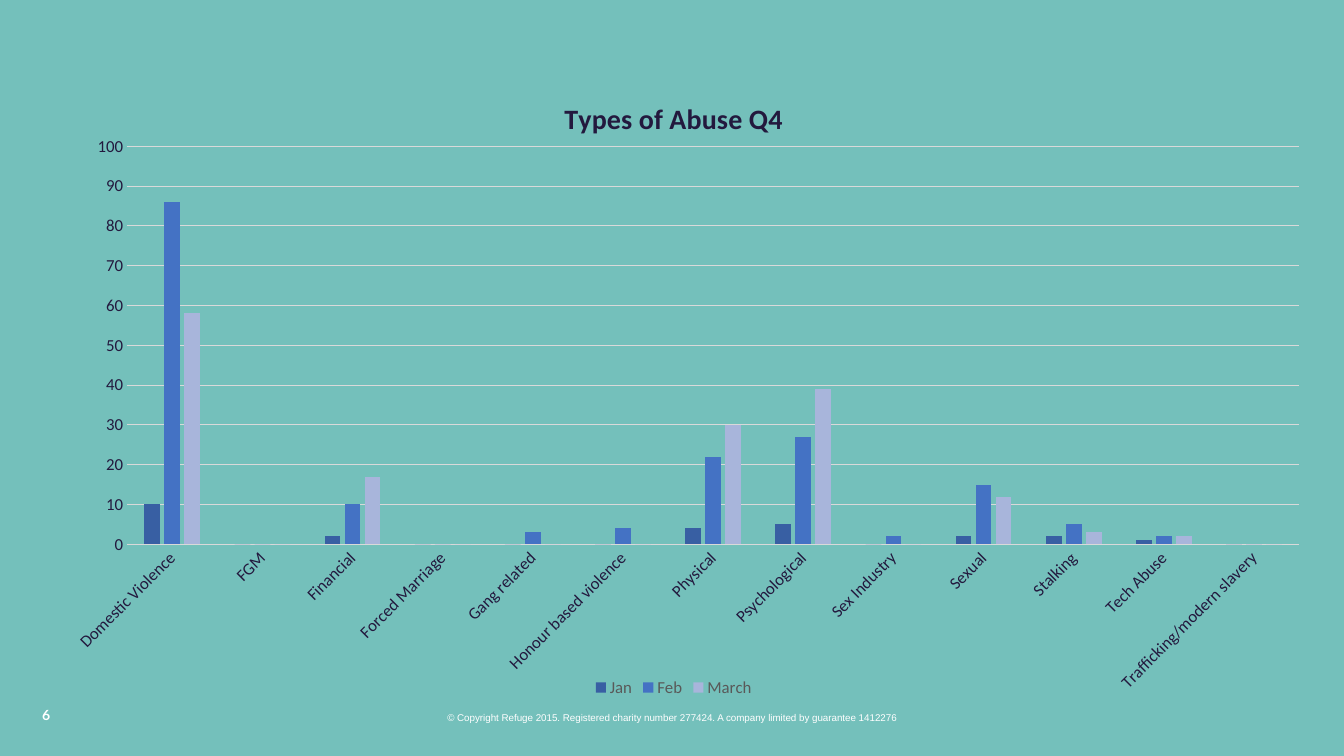
import pptx
import pptx.chart.data
import pptx.dml.color
import pptx.enum.chart
import pptx.enum.text
import pptx.oxml
import pptx.oxml.ns
import pptx.util
from pptx.util import Inches

COLORS = {
    "background": "74C0BB", "ink": "23193E", "grid": "D9D9D9",
    "legend": "595959", "white": "FFFFFF",
    "Jan": "385FA3", "Feb": "4472C4", "March": "A8B5DB",
}

ABUSE_TYPES = [
    "Domestic Violence", "FGM", "Financial", "Forced Marriage", "Gang related",
    "Honour based violence", "Physical", "Psychological", "Sex Industry",
    "Sexual", "Stalking", "Tech Abuse", "Trafficking/modern slavery",
]
MONTHLY_CASES = {
    "Jan": [10, 0, 2, 0, 0, 0, 4, 5, 0, 2, 2, 1, 0],
    "Feb": [86, 0, 10, 0, 3, 4, 22, 27, 2, 15, 5, 2, 0],
    "March": [58, 0, 17, 0, 0, 0, 30, 39, 0, 12, 3, 2, 0],
}


def rgb(name):
    """Return the named colour."""
    return pptx.dml.color.RGBColor.from_string(COLORS[name])


def style_font(font, size, color, family="Calibri", bold=False):
    """Set size, colour, family and weight of a font."""
    font.size = pptx.util.Pt(size)
    font.color.rgb = rgb(color)
    font.name = family
    font.bold = bold


def style_line(line):
    """Give a chart line the thin grid look."""
    line.color.rgb = rgb("grid")
    line.width = pptx.util.Pt(0.75)


def manual_layout(x, y, width=None, height=None):
    """Build a chart layout element from fractions of the chart area."""
    settings = [("xMode", "edge"), ("yMode", "edge"), ("x", x), ("y", y)]
    if width is not None:
        settings = [("layoutTarget", "inner")] + settings + [("w", width), ("h", height)]
    body = "".join(f'<c:{tag} val="{value}"/>' for tag, value in settings)
    return pptx.oxml.parse_xml(
        f'<c:layout {pptx.oxml.ns.nsdecls("c")}><c:manualLayout>{body}</c:manualLayout></c:layout>')


def style_axes(chart):
    """Format the category and value axes."""
    for axis in (chart.category_axis, chart.value_axis):
        axis.major_tick_mark = pptx.enum.chart.XL_TICK_MARK.NONE
        axis.minor_tick_mark = pptx.enum.chart.XL_TICK_MARK.NONE
        style_font(axis.tick_labels.font, 12, "ink")
    abuse_axis, cases_axis = chart.category_axis, chart.value_axis
    style_line(abuse_axis.format.line)
    label_body = abuse_axis._element.find(
        pptx.oxml.ns.qn("c:txPr")).find(pptx.oxml.ns.qn("a:bodyPr"))
    label_body.set("rot", "-2700000")
    label_body.set("vert", "horz")
    cases_axis.minimum_scale, cases_axis.maximum_scale = 0, 100
    cases_axis.major_unit = 10
    cases_axis.format.line.fill.background()
    style_line(cases_axis.major_gridlines.format.line)


def add_abuse_chart(slide, left, top, width, height):
    """Place the clustered column chart of abuse types in the given box."""
    cases = pptx.chart.data.CategoryChartData()
    cases.categories = ABUSE_TYPES
    for month, counts in MONTHLY_CASES.items():
        cases.add_series(month, counts)
    chart = slide.shapes.add_chart(
        pptx.enum.chart.XL_CHART_TYPE.COLUMN_CLUSTERED,
        left, top, width, height, cases).chart
    chart.font.size = pptx.util.Pt(10)
    chart.font.name = "Calibri"

    heading = chart.chart_title
    heading.text_frame.text = "Types of Abuse Q4"
    style_font(heading.text_frame.paragraphs[0].runs[0].font, 20, "ink", bold=True)
    heading.include_in_layout = False
    heading._element.find(pptx.oxml.ns.qn("c:tx")).addnext(manual_layout(0.41, 0.04))

    chart.has_legend = True
    chart.legend.position = pptx.enum.chart.XL_LEGEND_POSITION.BOTTOM
    chart.legend.include_in_layout = False
    style_font(chart.legend.font, 12, "legend")

    columns = chart.plots[0]
    columns.gap_width, columns.overlap = 219, -27
    columns.vary_by_categories = False
    for month in columns.series:
        month.format.fill.solid()
        month.format.fill.fore_color.rgb = rgb(month.name)
        month.invert_if_negative = False
    style_axes(chart)

    plot_area = chart._chartSpace.chart.plotArea
    for automatic in plot_area.findall(pptx.oxml.ns.qn("c:layout")):
        plot_area.remove(automatic)
    plot_area.insert(0, manual_layout(0.063, 0.113, 0.937, 0.636))


def add_note(slide, words, box, size, family, bold=False, centered=False):
    """Place one line of white text in the given box."""
    note = slide.shapes.add_textbox(*box).text_frame
    note.word_wrap = True
    note.text = words
    line = note.paragraphs[0]
    if centered:
        line.alignment = pptx.enum.text.PP_ALIGN.CENTER
    style_font(line.runs[0].font, size, "white", family, bold)


def add_footer(slide, left, top, width):
    """Place the page number and the copyright line along the bottom."""
    add_note(slide,
             "© Copyright Refuge 2015. Registered charity number 277424. "
             "A company limited by guarantee 1412276",
             (left, top + Inches(0.05), width, Inches(0.22)), 7, "Arial", centered=True)
    add_note(slide, "6", (left + Inches(0.32), top, Inches(3), Inches(0.4)),
             10, "Lato", bold=True)


def main():
    """Build and save the slide."""
    deck = pptx.Presentation()
    deck.slide_width, deck.slide_height = Inches(13.33), Inches(7.5)
    slide = deck.slides.add_slide(deck.slide_layouts[6])
    slide.background.fill.solid()
    slide.background.fill.fore_color.rgb = rgb("background")
    add_abuse_chart(slide, Inches(0.48), Inches(0.75), Inches(12.41), Inches(6.21))
    add_footer(slide, Inches(0), Inches(6.96), deck.slide_width)
    deck.save("out.pptx")


if __name__ == "__main__":
    main()
